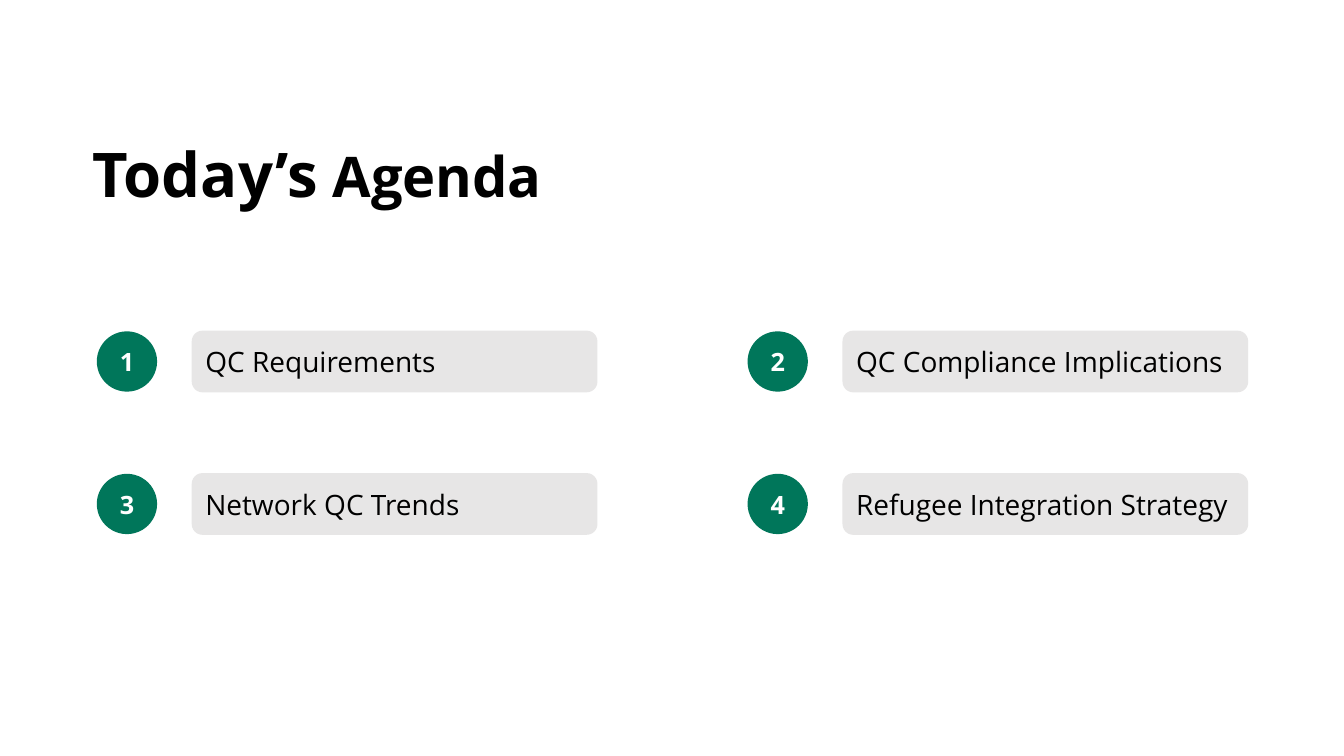
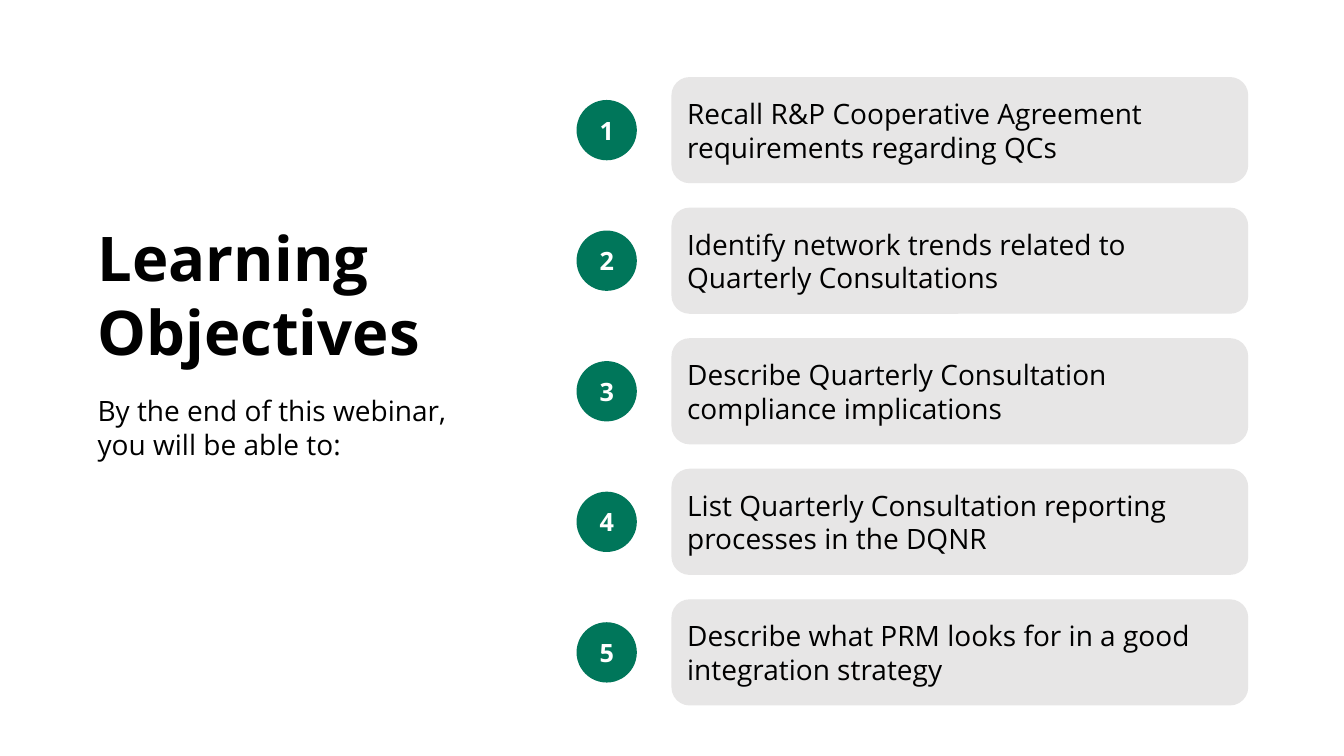
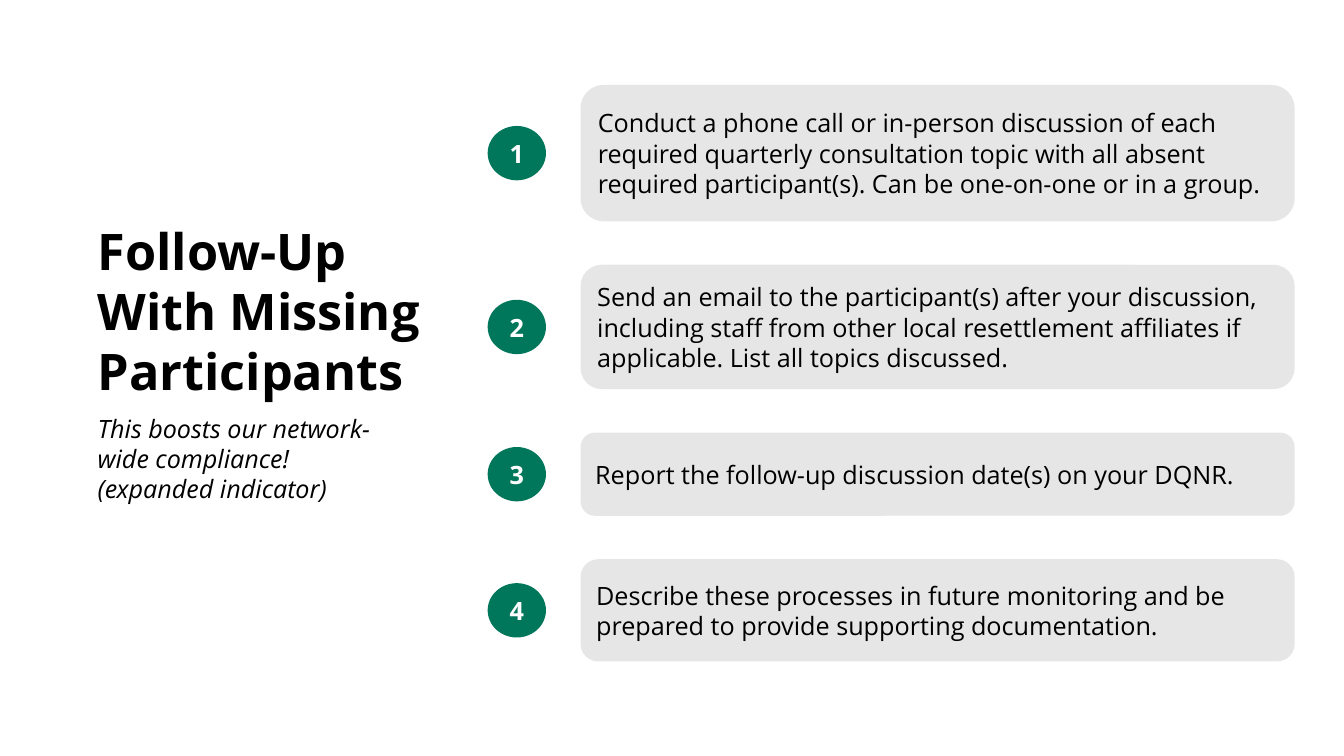
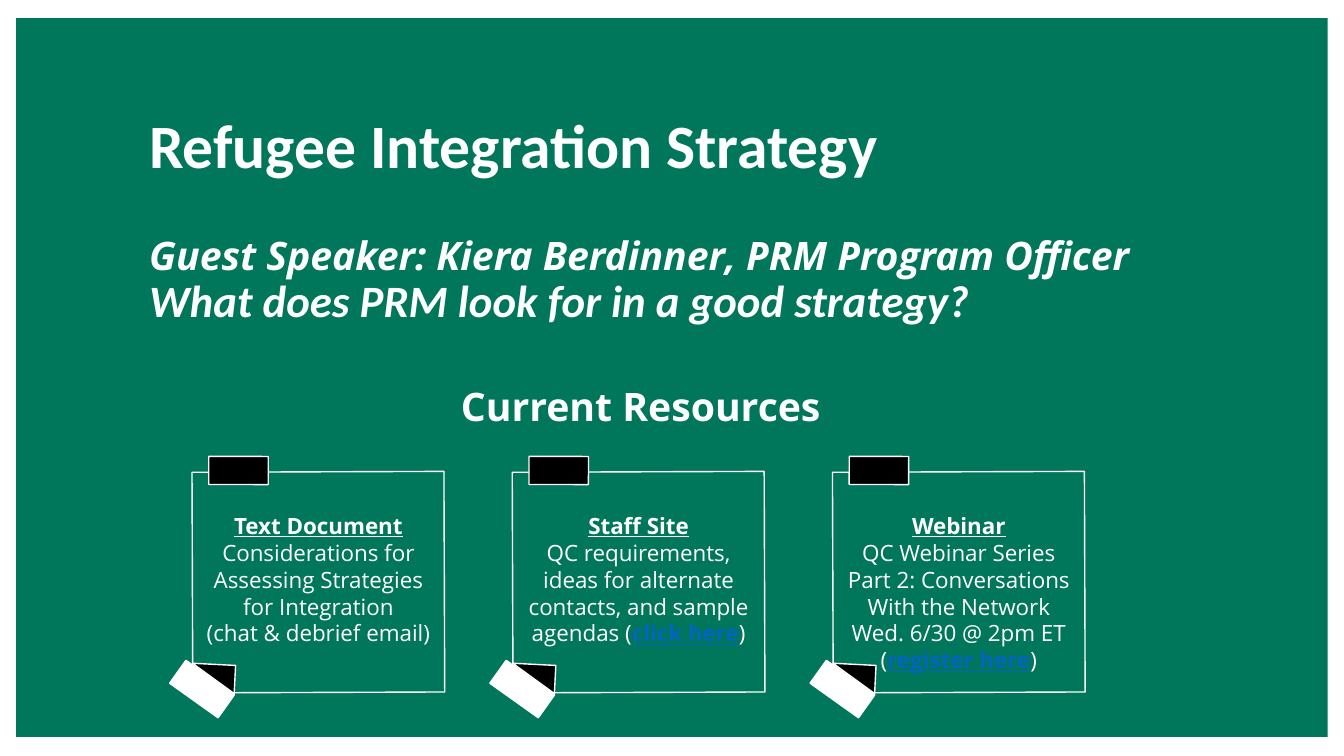
from pptx import Presentation
from pptx.dml.color import RGBColor
from pptx.enum import shapes, text
from pptx.util import Cm, Pt

GREEN = RGBColor(0x00, 0x76, 0x5A)
GREY = RGBColor(0xE7, 0xE6, 0xE6)
BLACK = RGBColor(0x00, 0x00, 0x00)
WHITE = RGBColor(0xFF, 0xFF, 0xFF)
BLUE = RGBColor(0x05, 0x63, 0xC1)

SHAPE = shapes.MSO_SHAPE
CENTER = text.PP_ALIGN.CENTER
LEFT = text.PP_ALIGN.LEFT
HEAD = dict(bold=True, underline=True)
LINK = dict(HEAD, color=BLUE)


def add_run(p, content, size=20, font="Open Sans", color=BLACK,
            bold=False, italic=False, underline=False):
    r = p.add_run()
    r.text = content
    f = r.font
    f.name, f.size = font, Pt(size)
    f.bold, f.italic, f.underline = bold, italic, underline
    f.color.rgb = color


def write(tf, paragraphs, align=LEFT, spacing=None, **fmt):
    tf.word_wrap = True
    for i, runs in enumerate(paragraphs):
        p = tf.add_paragraph() if i else tf.paragraphs[0]
        p.alignment = align
        if spacing:
            p.line_spacing = spacing
        for content, own in runs:
            add_run(p, content, **{**fmt, **own})


def plain(*lines):
    return [[(line, {})] for line in lines]


class Deck:
    badge_w = 1.52

    def __init__(self):
        self.prs = Presentation()
        self.prs.slide_width, self.prs.slide_height = Cm(33.87), Cm(19.05)

    def new_slide(self):
        self.s = self.prs.slides.add_slide(self.prs.slide_layouts[6])

    def shape(self, kind, x, y, w, h, fill=None, line=None, rotation=0, parent=None):
        sp = (parent or self.s).shapes.add_shape(kind, Cm(x), Cm(y), Cm(w), Cm(h))
        sp.shadow.inherit = False
        sp.rotation = rotation
        if fill is None:
            sp.fill.background()
        else:
            sp.fill.solid()
            sp.fill.fore_color.rgb = fill
        if line is None:
            sp.line.fill.background()
        else:
            sp.line.color.rgb = line
            sp.line.width = Pt(1)
        return sp

    def textbox(self, paragraphs, x, y, w, h, grow=True, **fmt):
        tf = self.s.shapes.add_textbox(Cm(x), Cm(y), Cm(w), Cm(h)).text_frame
        write(tf, paragraphs, **fmt)
        if grow:
            tf.auto_size = text.MSO_AUTO_SIZE.SHAPE_TO_FIT_TEXT

    def title(self, paragraphs, x, y, w, h, size=44):
        self.textbox(paragraphs, x, y, w, h, size=size, bold=True)

    def item(self, number, label, badge_x, x, y, w, h, size=20, badge=(1.52, 1.52)):
        badge_w, badge_h = badge
        sp = self.shape(SHAPE.OVAL, badge_x, y + (h - badge_h) / 2,
                        badge_w, badge_h, GREEN)
        write(sp.text_frame, plain(str(number)), align=CENTER,
              size=18, color=WHITE, bold=True)
        bar = self.shape(SHAPE.ROUNDED_RECTANGLE, x, y, w, h, GREY, GREY)
        write(bar.text_frame, plain(label), size=size)
        for tf in (sp.text_frame, bar.text_frame):
            tf.vertical_anchor = text.MSO_ANCHOR.MIDDLE

    def note(self, paragraphs, x, h):
        grp = self.s.shapes.add_group_shape()
        for kind, dx, y, w, height, fill, rotation in (
            (SHAPE.RECTANGLE, 0, 11.89, 6.35, 5.56, None, 359.8),
            (SHAPE.RIGHT_TRIANGLE, -0.02, 16.74, 1.09, 0.71, BLACK, 182.9),
            (SHAPE.RECTANGLE, -0.51, 17.01, 1.5, 0.71, WHITE, 35.5),
            (SHAPE.RECTANGLE, 0.41, 11.5, 1.5, 0.71, BLACK, 0.1),
        ):
            self.shape(kind, x + dx, y, w, height, fill, WHITE, rotation, grp)
        self.textbox(paragraphs, x, 12.78, 6.35, h, align=CENTER, size=16, color=WHITE)


def agenda(d):
    d.new_slide()
    d.title([[("Today’s", {}), (" Agenda", dict(size=40))]], 2.08, 3.3, 18.49, 2.13)
    topics = ("QC Requirements", "QC Compliance Implications",
              "Network QC Trends", "Refugee Integration Strategy")
    for i, topic in enumerate(topics):
        row, col = divmod(i, 2)
        x = 2.44 + 16.4 * col
        d.item(i + 1, topic, x, x + 2.41, 8.35 + 3.59 * row, 10.19, 1.52)


def objectives(d):
    d.new_slide()
    d.title(plain("Learning", "Objectives"), 2.21, 5.41, 9.83, 4.01)
    d.textbox(plain("By the end of this webinar, you will be able to:"),
              2.21, 9.8, 10.59, 1.96)
    goals = (
        "Recall R&P Cooperative Agreement requirements regarding QCs",
        "Identify network trends related to Quarterly Consultations",
        "Describe Quarterly Consultation compliance implications",
        "List Quarterly Consultation reporting processes in the DQNR",
        "Describe what PRM looks for in a good integration strategy",
    )
    for i, goal in enumerate(goals):
        d.item(i + 1, goal, 14.53, 16.94, 1.96 + 3.29 * i, 14.5, 2.64)


def follow_up(d):
    d.new_slide()
    d.title(plain("Follow-Up With Missing Participants"), 2.21, 5.41, 9.83, 4.88, size=36)
    d.textbox(plain("This boosts our network-wide compliance!", "(expanded indicator)"),
              2.21, 10.29, 7.44, 2.57, size=18, italic=True)
    steps = (
        (3.4, "Conduct a phone call or in-person discussion of each required quarterly "
              "consultation topic with all absent required participant(s). "
              "Can be one-on-one or in a group."),
        (3.1, "Send an email to the participant(s) after your discussion, including staff "
              "from other local resettlement affiliates if applicable. "
              "List all topics discussed."),
        (2.06, "Report the follow-up discussion date(s) on your DQNR."),
        (2.54, "Describe these processes in future monitoring and be prepared to provide "
               "supporting documentation."),
    )
    y = 2.16
    for number, (h, step) in enumerate(steps, 1):
        d.item(number, step, 12.29, 14.65, y, 17.96, h, size=18, badge=(1.47, 1.37))
        y += h + 1.13


def strategy(d):
    d.new_slide()
    d.shape(SHAPE.RECTANGLE, 0.41, 0.46, 33.05, 18.11, GREEN)
    d.textbox(plain("Refugee Integration Strategy"), 3.51, 2.79, 28.93, 2.31, grow=False,
              spacing=0.9, size=44, font="Calibri", color=WHITE, bold=True)
    d.textbox([[("Guest Speaker: Kiera Berdinner, PRM Program Officer", {})],
               [("What does PRM look for in a good strategy?", dict(size=32, font="Calibri"))]],
              3.51, 5.84, 28.93, 2.31, grow=False,
              spacing=0.9, size=28, color=WHITE, bold=True, italic=True)
    notes = (
        (3.68, [[("Text Document", HEAD)],
                *plain("Considerations for Assessing Strategies for Integration",
                       "(chat & debrief email)")]),
        (3.68, [[("Staff Site", HEAD)],
                [("QC requirements, ideas for alternate contacts, and sample agendas (", {}),
                 ("click here", LINK), (")", {})]]),
        (4.37, [[("Webinar", HEAD)],
                *plain("QC Webinar Series", "Part 2: Conversations With the Network",
                       "Wed. 6/30 @ 2pm ET"),
                [("(", {}), ("register here", LINK), (")", {})]]),
    )
    for i, (h, paragraphs) in enumerate(notes):
        d.note(paragraphs, 4.85 + 8.07 * i, h)
    d.textbox(plain("Current Resources"), 10.52, 9.5, 11.25, 1.45,
              align=CENTER, size=28, color=WHITE, bold=True)


def main():
    d = Deck()
    for build in (agenda, objectives, follow_up, strategy):
        build(d)
    d.prs.save("out.pptx")


if __name__ == "__main__":
    main()
